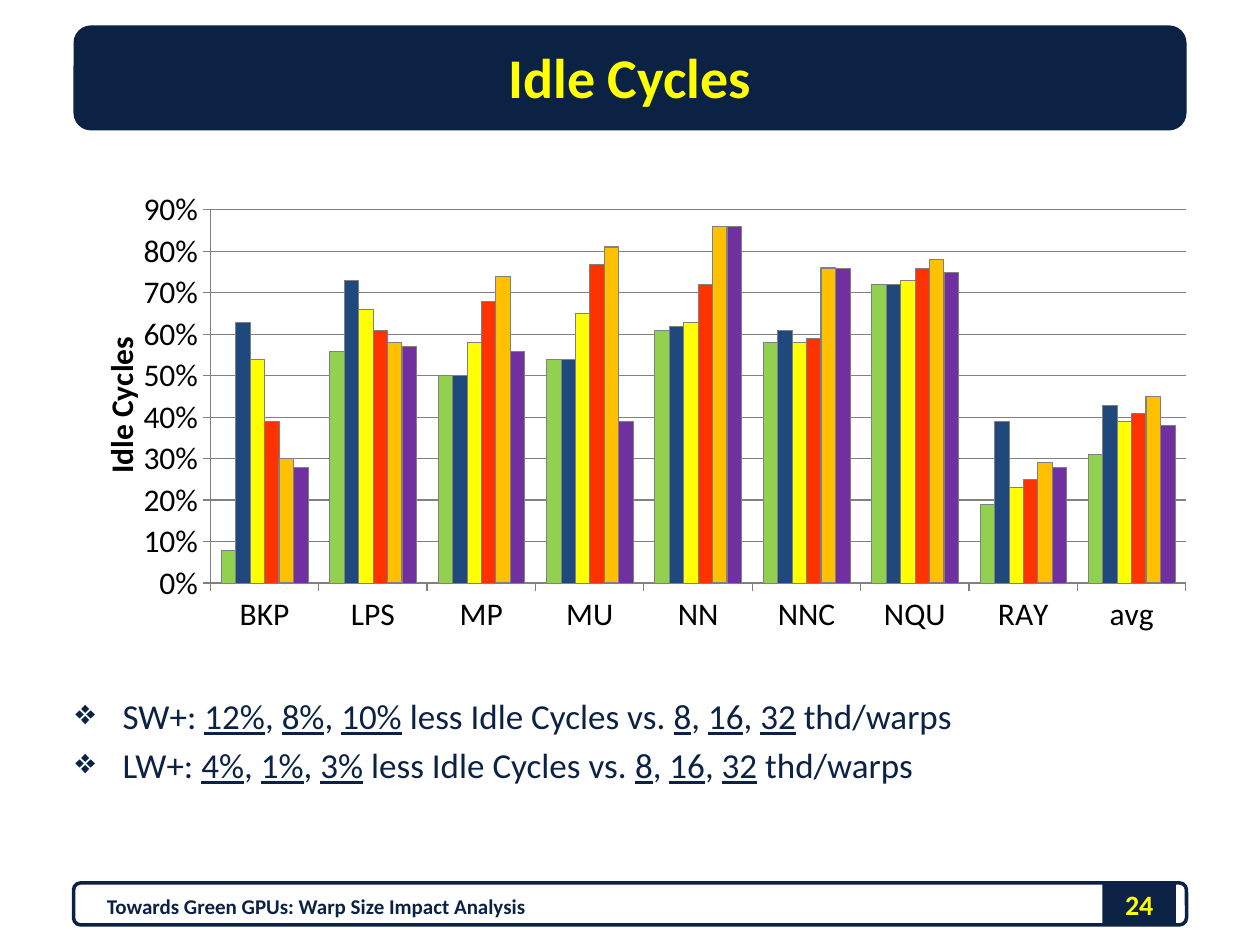
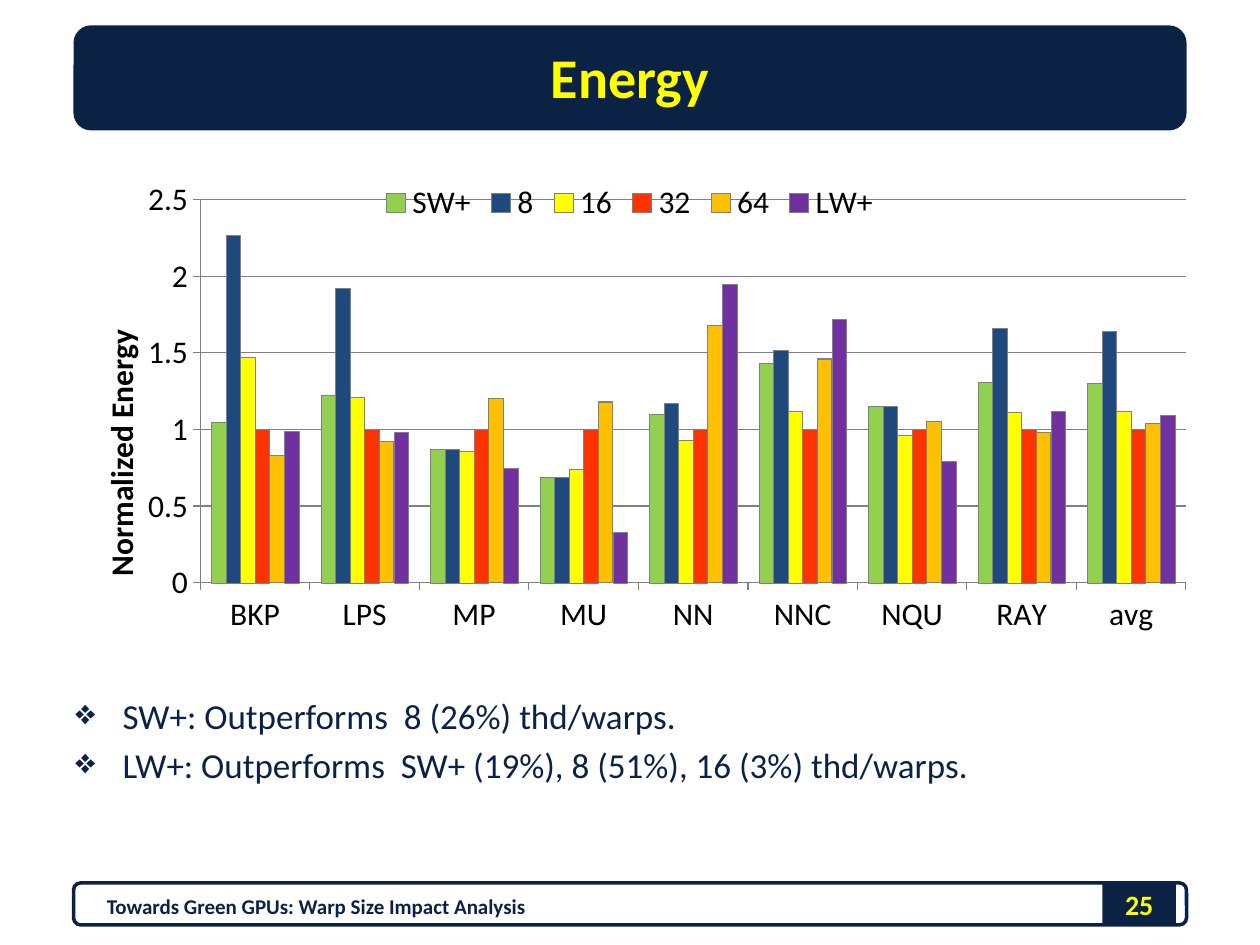
from dataclasses import dataclass

from pptx import Presentation
from pptx.chart.data import CategoryChartData
from pptx.dml.color import RGBColor
from pptx.enum.chart import XL_CHART_TYPE, XL_LEGEND_POSITION, XL_TICK_MARK
from pptx.enum.shapes import MSO_SHAPE
from pptx.enum.text import MSO_ANCHOR, PP_ALIGN
from pptx.oxml import parse_xml
from pptx.oxml.ns import nsdecls, qn
from pptx.util import Pt

COLUMNS = XL_CHART_TYPE.COLUMN_CLUSTERED
LEGEND_TOP = XL_LEGEND_POSITION.TOP
TICK_OUTSIDE = XL_TICK_MARK.OUTSIDE
RECTANGLE = MSO_SHAPE.RECTANGLE
ROUNDED = MSO_SHAPE.ROUNDED_RECTANGLE
MIDDLE = MSO_ANCHOR.MIDDLE
TOP = MSO_ANCHOR.TOP
LEFT = PP_ALIGN.LEFT
CENTER = PP_ALIGN.CENTER


@dataclass(frozen=True)
class Theme:
    """Colours, font and type sizes of the deck."""

    font: str = "Calibri"
    navy: str = "0B2245"
    yellow: str = "FFFF00"
    black: str = "000000"
    grey: str = "808080"
    title_size: int = 32
    body_size: int = 20
    chart_size: int = 18
    number_size: int = 16
    footer_size: int = 12
    indent: int = 27


THEME = Theme()
FOOTER = "Towards Green GPUs: Warp Size Impact Analysis"
BENCHMARKS = ["BKP", "LPS", "MP", "MU", "NN", "NNC", "NQU", "RAY", "avg"]
WARP_COLORS = {
    "SW+": "92D050",
    "8": "1F497D",
    "16": "FFFF00",
    "32": "FF3300",
    "64": "FFC000",
    "LW+": "7030A0",
}
IDLE_CYCLES = [
    [0.08, 0.56, 0.5, 0.54, 0.61, 0.58, 0.72, 0.19, 0.31],
    [0.63, 0.73, 0.5, 0.54, 0.62, 0.61, 0.72, 0.39, 0.43],
    [0.54, 0.66, 0.58, 0.65, 0.63, 0.58, 0.73, 0.23, 0.39],
    [0.39, 0.61, 0.68, 0.77, 0.72, 0.59, 0.76, 0.25, 0.41],
    [0.3, 0.58, 0.74, 0.81, 0.86, 0.76, 0.78, 0.29, 0.45],
    [0.28, 0.57, 0.56, 0.39, 0.86, 0.76, 0.75, 0.28, 0.38],
]
ENERGY = [
    [1.05, 1.22, 0.87, 0.69, 1.1, 1.43, 1.15, 1.31, 1.3],
    [2.27, 1.92, 0.87, 0.69, 1.17, 1.52, 1.15, 1.66, 1.64],
    [1.47, 1.21, 0.86, 0.74, 0.93, 1.12, 0.96, 1.11, 1.12],
    [1] * len(BENCHMARKS),
    [0.83, 0.92, 1.2, 1.18, 1.68, 1.46, 1.05, 0.98, 1.04],
    [0.99, 0.98, 0.75, 0.33, 1.95, 1.72, 0.79, 1.12, 1.09],
]


def rgb(code):
    """Turn a hex code into a colour."""
    return RGBColor.from_string(code)


def set_font(font, size, color, bold=False):
    """Apply the deck font with a size, colour and weight."""
    font.name = THEME.font
    font.size = Pt(size)
    font.bold = bold
    font.color.rgb = rgb(color)


def add_panel(page, frame, preset, fill=None, line=None):
    """Draw a flat preset shape, filled or outlined."""
    panel = page.shapes.add_shape(preset, *map(Pt, frame))
    panel.shadow.inherit = False
    if fill:
        panel.fill.solid()
        panel.fill.fore_color.rgb = rgb(fill)
    else:
        panel.fill.background()
    if line:
        panel.line.color.rgb = rgb(line)
        panel.line.width = Pt(2)
    else:
        panel.line.fill.background()


def add_bullet(para):
    """Give a paragraph a hanging diamond bullet."""
    props = para._p.get_or_add_pPr()
    props.set("marL", str(Pt(THEME.indent)))
    props.set("indent", str(-Pt(THEME.indent)))
    props.append(parse_xml(f'<a:buChar {nsdecls("a")} char="❖"/>'))


def add_text(page, frame, text, *, size, color, bold=False, align=LEFT,
             anchor=MIDDLE, bullets=False):
    """Write lines of text, underlining the parts between underscores."""
    box = page.shapes.add_textbox(*map(Pt, frame)).text_frame
    box.word_wrap = True
    box.vertical_anchor = anchor
    for row, line in enumerate(text.split("\n")):
        para = box.add_paragraph() if row else box.paragraphs[0]
        para.alignment = align
        if row:
            para.space_before = Pt(size * 0.2)
        if bullets:
            add_bullet(para)
        set_font(para.font, size, color, bold)
        for part, words in enumerate(line.split("_")):
            span = para.add_run()
            span.text = words
            set_font(span.font, size, color, bold)
            span.font.underline = part % 2 == 1


def set_layout(element, position, **values):
    """Fix the place of a chart part as fractions of the chart."""
    for old in element.findall(qn("c:layout")):
        element.remove(old)
    items = "".join(f'<c:{key} val="{value}"/>' for key, value in values.items())
    element.insert(position, parse_xml(
        f'<c:layout {nsdecls("c")}><c:manualLayout>{items}</c:manualLayout></c:layout>'))


def style_axis(axis):
    """Set the line, ticks and labels of an axis."""
    axis.major_tick_mark = TICK_OUTSIDE
    axis.minor_tick_mark = XL_TICK_MARK.NONE
    axis.format.line.color.rgb = rgb(THEME.grey)
    set_font(axis.tick_labels.font, THEME.chart_size, THEME.black)


def style_value_axis(axis, title, top, step, number_format):
    """Set the scale, grid and rotated title of the value axis."""
    style_axis(axis)
    axis.minimum_scale = 0
    axis.maximum_scale = top
    axis.major_unit = step
    axis.tick_labels.number_format = number_format
    axis.tick_labels.number_format_is_linked = False
    axis.major_gridlines.format.line.color.rgb = rgb(THEME.grey)
    frame = axis.axis_title.text_frame
    frame.text = title
    set_font(frame.paragraphs[0].runs[0].font, THEME.chart_size, THEME.black, True)
    body = frame._txBody.find(qn("a:bodyPr"))
    body.set("rot", "-5400000")
    body.set("vert", "horz")
    set_layout(axis.axis_title._element, 1,
               xMode="edge", yMode="edge", x=0.018, y=0.316)


def add_legend(chart):
    """Show the legend over the top of the plot."""
    chart.has_legend = True
    chart.legend.position = LEGEND_TOP
    chart.legend.include_in_layout = True
    set_font(chart.legend.font, THEME.chart_size, THEME.black)


def add_warp_chart(page, frame, rows, plot_area, *, title, top, step,
                   number_format="General", legend=False):
    """Draw a column chart comparing warp sizes per benchmark."""
    data = CategoryChartData()
    data.categories = BENCHMARKS
    for name, values in zip(WARP_COLORS, rows):
        data.add_series(name, values)
    chart = page.shapes.add_chart(COLUMNS, *map(Pt, frame), data).chart
    chart.has_title = False
    set_font(chart.font, THEME.chart_size, THEME.black)
    style_axis(chart.category_axis)
    style_value_axis(chart.value_axis, title, top, step, number_format)
    plot = chart.plots[0]
    plot.vary_by_categories = False
    plot.gap_width = 150
    plot.overlap = 0
    for series in plot.series:
        series.format.fill.solid()
        series.format.fill.fore_color.rgb = rgb(WARP_COLORS[series.name])
        series.format.line.color.rgb = rgb(THEME.grey)
        series.format.line.width = Pt(0.75 if series.name == "64" else 0.25)
    chart.has_legend = False
    if legend:
        add_legend(chart)
    left, upper, width, height = plot_area
    set_layout(chart._chartSpace.find(".//" + qn("c:plotArea")), 0,
               layoutTarget="inner", xMode="edge", yMode="edge",
               x=left, y=upper, w=width, h=height)


def add_page(deck, title, number, findings):
    """Add a page with its title band, footer and findings."""
    page = deck.slides.add_slide(deck.slide_layouts[6])
    add_panel(page, (630, 504, 42, 24), RECTANGLE, fill=THEME.navy)
    add_panel(page, (42, 504.5, 636, 24), ROUNDED, line=THEME.navy)
    add_panel(page, (42, 14.5, 636, 60), ROUNDED, fill=THEME.navy)
    add_text(page, (36, 12.5, 648, 62.5), title, size=THEME.title_size,
             color=THEME.yellow, bold=True, align=CENTER)
    add_text(page, (36, 393.5, 648, 89), findings, size=THEME.body_size,
             color=THEME.navy, anchor=TOP, bullets=True)
    add_text(page, (624, 502.5, 54, 29), str(number), size=THEME.number_size,
             color=THEME.yellow, bold=True, align=CENTER)
    add_text(page, (54, 503.5, 402, 29), FOOTER, size=THEME.footer_size,
             color=THEME.navy, bold=True)
    return page


def main():
    """Build the two result pages and save the deck."""
    deck = Presentation()
    deck.slide_width, deck.slide_height = Pt(720), Pt(540)

    page = add_page(
        deck, "Idle Cycles", 24,
        "SW+: _12%_, _8%_, _10%_ less Idle Cycles vs. _8_, _16_, _32_ thd/warps\n"
        "LW+: _4%_, _1%_, _3%_ less Idle Cycles vs. _8_, _16_, _32_ thd/warps")
    add_warp_chart(page, (42, 102, 636, 276), IDLE_CYCLES,
                   (0.123, 0.065, 0.877, 0.773), title="Idle Cycles",
                   top=0.9, step=0.1, number_format="0%")

    page = add_page(
        deck, "Energy", 25,
        "SW+: Outperforms  8 (26%) thd/warps.\n"
        "LW+: Outperforms  SW+ (19%), 8 (51%), 16 (3%) thd/warps.")
    add_warp_chart(page, (42, 96, 636, 281.5), ENERGY,
                   (0.114, 0.064, 0.886, 0.778), title="Normalized Energy",
                   top=2.5, step=0.5, legend=True)

    deck.save("out.pptx")


if __name__ == "__main__":
    main()
